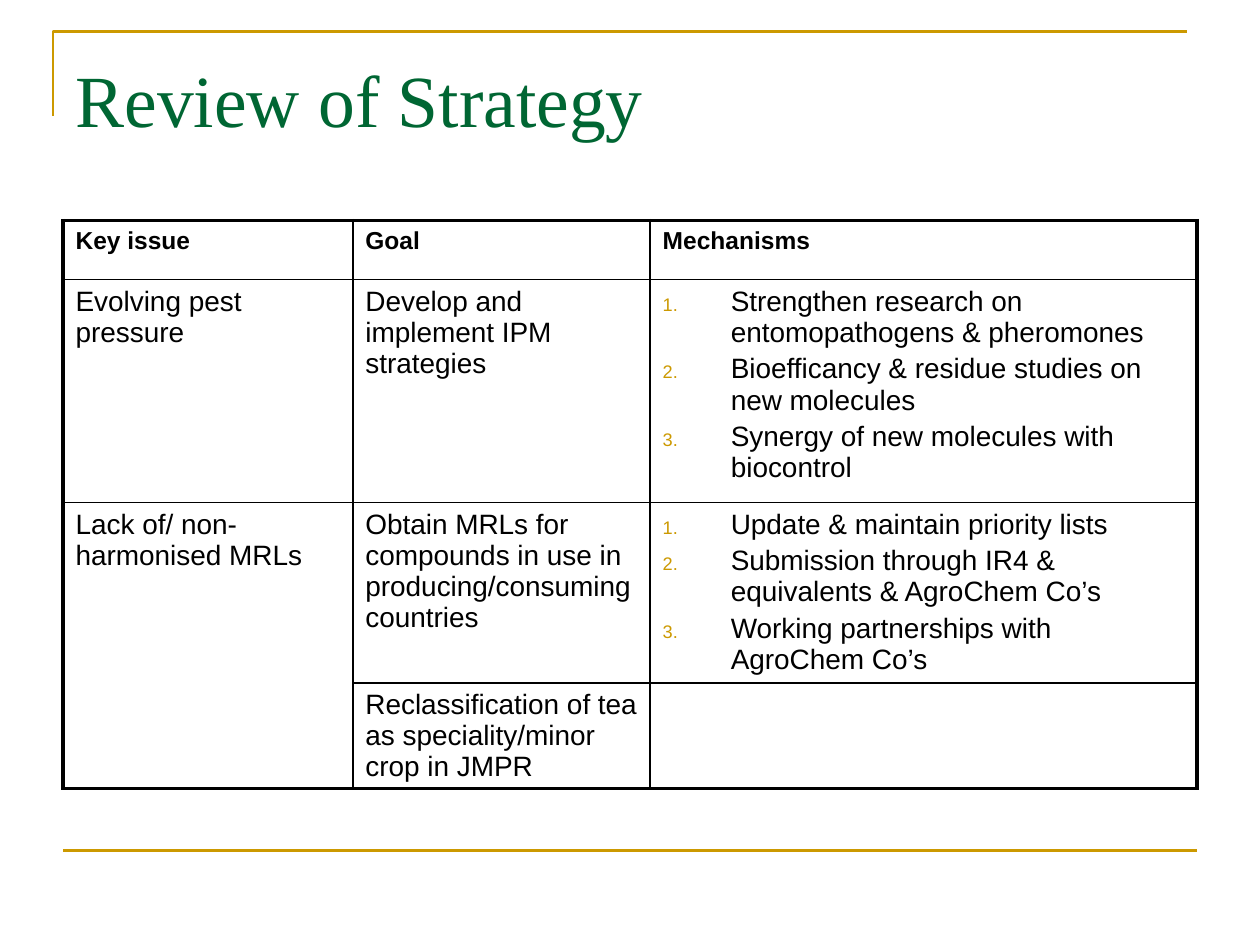
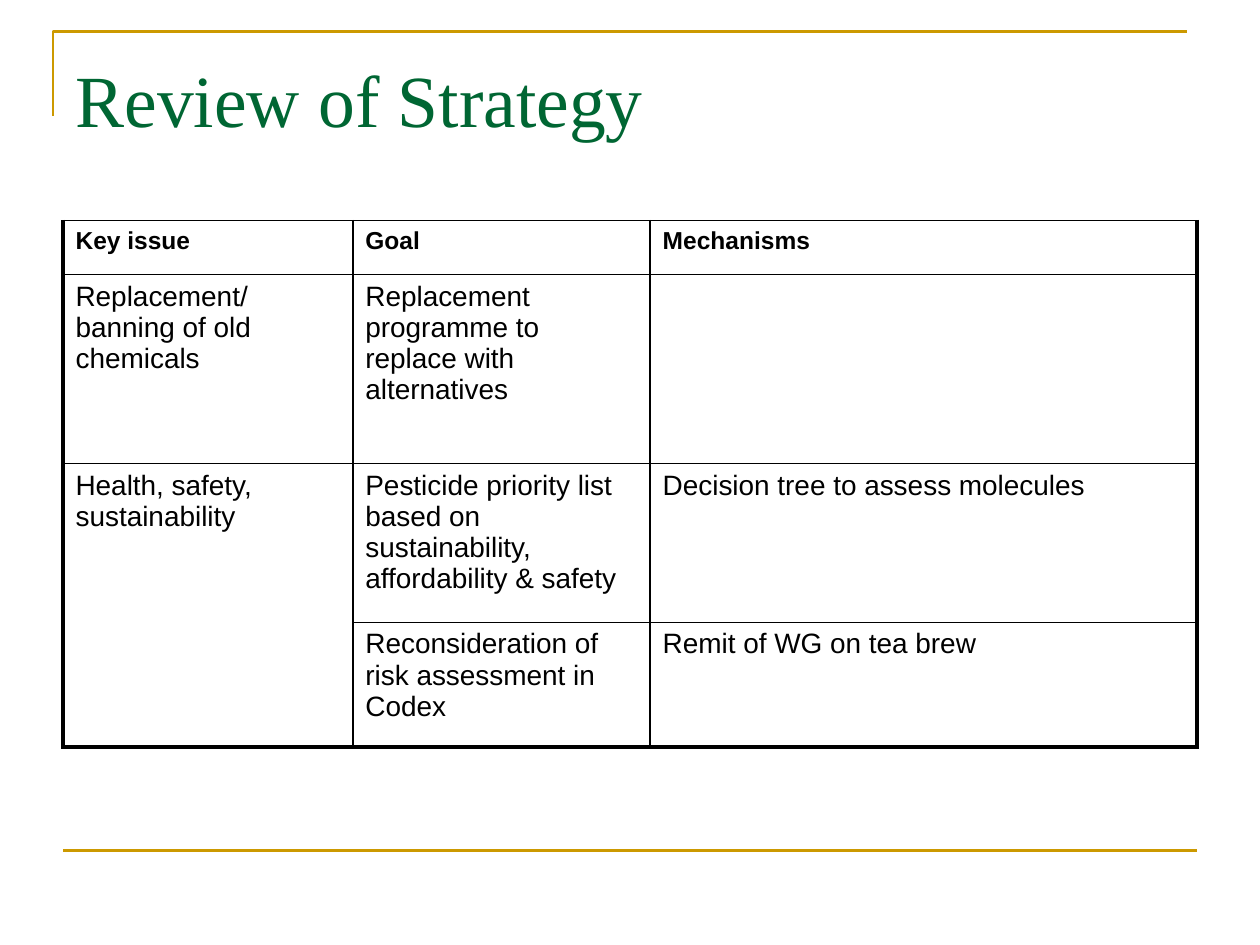
from dataclasses import dataclass

from lxml import etree
from pptx import Presentation
from pptx import util as u
from pptx.dml import color
from pptx.enum import shapes, text
from pptx.oxml import ns

Inches = u.Inches


@dataclass(frozen=True)
class Theme:
    gold: str = "CC9900"
    green: str = "006633"
    black: str = "000000"
    serif: str = "Times New Roman"
    sans: str = "Arial"
    title: float = 42
    head: float = 14
    body: float = 16
    rule: float = 1.5
    thin: float = 1
    thick: float = 2.25


@dataclass(frozen=True)
class Page:
    title: str
    rows: list      # each cell is a string, or a list of numbered points
    heights: list
    top: float      # weight of the top border


T = Theme()
TITLE = "Review of Strategy"
HEAD = ["Key issue", "Goal", "Mechanisms"]
WIDTHS = [2.3, 2.36, 4.34]
LEFT, TOP, WIDE = 0.5, 1.75, 9

PAGES = [
    Page(TITLE, [
        HEAD,
        ["Evolving pest pressure", "Develop and implement IPM strategies",
         ["Strengthen research on entomopathogens & pheromones",
          "Bioefficancy & residue studies on new molecules",
          "Synergy of new molecules with biocontrol"]],
        ["Lack of/ non-harmonised MRLs",
         "Obtain MRLs for compounds in use in producing/consuming countries",
         ["Update & maintain priority lists",
          "Submission through IR4 & equivalents & AgroChem Co’s",
          "Working partnerships with AgroChem Co’s"]],
        ["", "Reclassification of tea as speciality/minor crop in JMPR", ""],
    ], [0.47, 1.77, 1.43, 0.83], T.thick),
    Page(TITLE, [
        HEAD,
        ["Replacement/ banning of old chemicals",
         "Replacement programme to replace with alternatives", ""],
        ["Health, safety, sustainability",
         "Pesticide priority list based on sustainability, affordability & safety",
         "Decision tree to assess molecules"],
        ["", "Reconsideration of risk assessment in Codex", "Remit of WG on tea brew"],
    ], [0.43, 1.5, 1.26, 0.99], T.thin),
]


def rgb(code: str) -> color.RGBColor:
    return color.RGBColor.from_string(code)


def add(parent, tag: str, **attrs):
    """Append a DrawingML child element."""
    return etree.SubElement(parent, ns.qn(tag), attrs)


def style(par, font: str, size: float, code: str, bold: bool = False) -> None:
    for run in par.runs:
        run.font.name, run.font.size = font, u.Pt(size)
        run.font.bold, run.font.color.rgb = bold, rgb(code)


# Gold frame: corner at the top, rule at the foot
def draw_frame(slide) -> None:
    pen = slide.shapes.build_freeform(Inches(0.42), Inches(0.92))
    pen.add_line_segments([(Inches(0.42), Inches(0.25)),
                           (Inches(9.42), Inches(0.25))], close=False)
    corner = pen.convert_to_shape()
    corner.fill.background()
    corner.shadow.inherit = False
    foot = slide.shapes.add_connector(
        shapes.MSO_CONNECTOR.STRAIGHT, Inches(LEFT), Inches(6.75),
        Inches(LEFT + WIDE), Inches(6.75))
    add(foot.element.spPr, "a:effectLst")
    for shape in (corner, foot):
        shape.line.color.rgb = rgb(T.gold)
        shape.line.width = u.Pt(T.rule)


def draw_title(slide, words: str) -> None:
    title = slide.shapes.title
    title.left, title.top = Inches(LEFT), Inches(0.3)
    title.width, title.height = Inches(WIDE), Inches(1.25)
    frame = title.text_frame
    frame.text = words
    frame.auto_size = text.MSO_AUTO_SIZE.NONE
    frame.vertical_anchor = text.MSO_ANCHOR.TOP
    frame.margin_top = Inches(0.13)
    par = frame.paragraphs[0]
    par.alignment = text.PP_ALIGN.LEFT
    style(par, T.serif, T.title, T.green)


# Paragraph spacing and numbers inside a cell
def fill_cell(cell, words, head: bool) -> None:
    points = isinstance(words, list)
    cell.text_frame.text = "\n".join(words) if points else words
    for par in cell.text_frame.paragraphs:
        style(par, T.sans, T.head if head else T.body, T.black, head)
        props = par._p.get_or_add_pPr()
        add(add(props, "a:spcBef"), "a:spcPct", val="20000")
        if points:
            props.set("marL", str(Inches(0.54)))
            props.set("indent", str(Inches(-0.54)))
            add(add(props, "a:buClr"), "a:srgbClr", val=T.gold)
            add(props, "a:buSzPct", val="65000")
            add(props, "a:buFont", typeface=T.sans)
            add(props, "a:buAutoNum", type="arabicPeriod")


def edge_cell(cell, edges: dict) -> None:
    props = cell._tc.get_or_add_tcPr()
    for side, weight in edges.items():
        line = add(props, "a:ln" + side, w=str(u.Pt(weight)))
        add(add(line, "a:solidFill"), "a:srgbClr", val=T.black)
    cell.fill.background()


def draw_table(slide, page: Page) -> None:
    last, end = len(page.rows) - 1, len(WIDTHS) - 1
    table = slide.shapes.add_table(
        last + 1, end + 1, Inches(LEFT), Inches(TOP), Inches(WIDE),
        Inches(sum(page.heights))).table
    table.first_row = table.horz_banding = False
    for col, width in zip(table.columns, WIDTHS):
        col.width = Inches(width)
    for row, height in zip(table.rows, page.heights):
        row.height = Inches(height)
    # The last key issue spans the two bottom rows
    table.cell(last - 1, 0).merge(table.cell(last, 0))
    for r, row in enumerate(page.rows):
        for c, words in enumerate(row):
            cell = table.cell(r, c)
            fill_cell(cell, words, r == 0)
            base = r == last or cell.is_merge_origin
            edge_cell(cell, {
                "L": T.thick if c == 0 else T.thin,
                "R": T.thick if c == end else T.thin,
                "T": page.top if r == 0 else T.thin,
                "B": T.thick if base else T.thin,
            })


def main() -> None:
    deck = Presentation()
    deck.slide_width, deck.slide_height = Inches(10), Inches(7.5)
    for page in PAGES:
        slide = deck.slides.add_slide(deck.slide_layouts[5])
        draw_frame(slide)
        draw_title(slide, page.title)
        draw_table(slide, page)
    deck.save("out.pptx")


if __name__ == "__main__":
    main()
